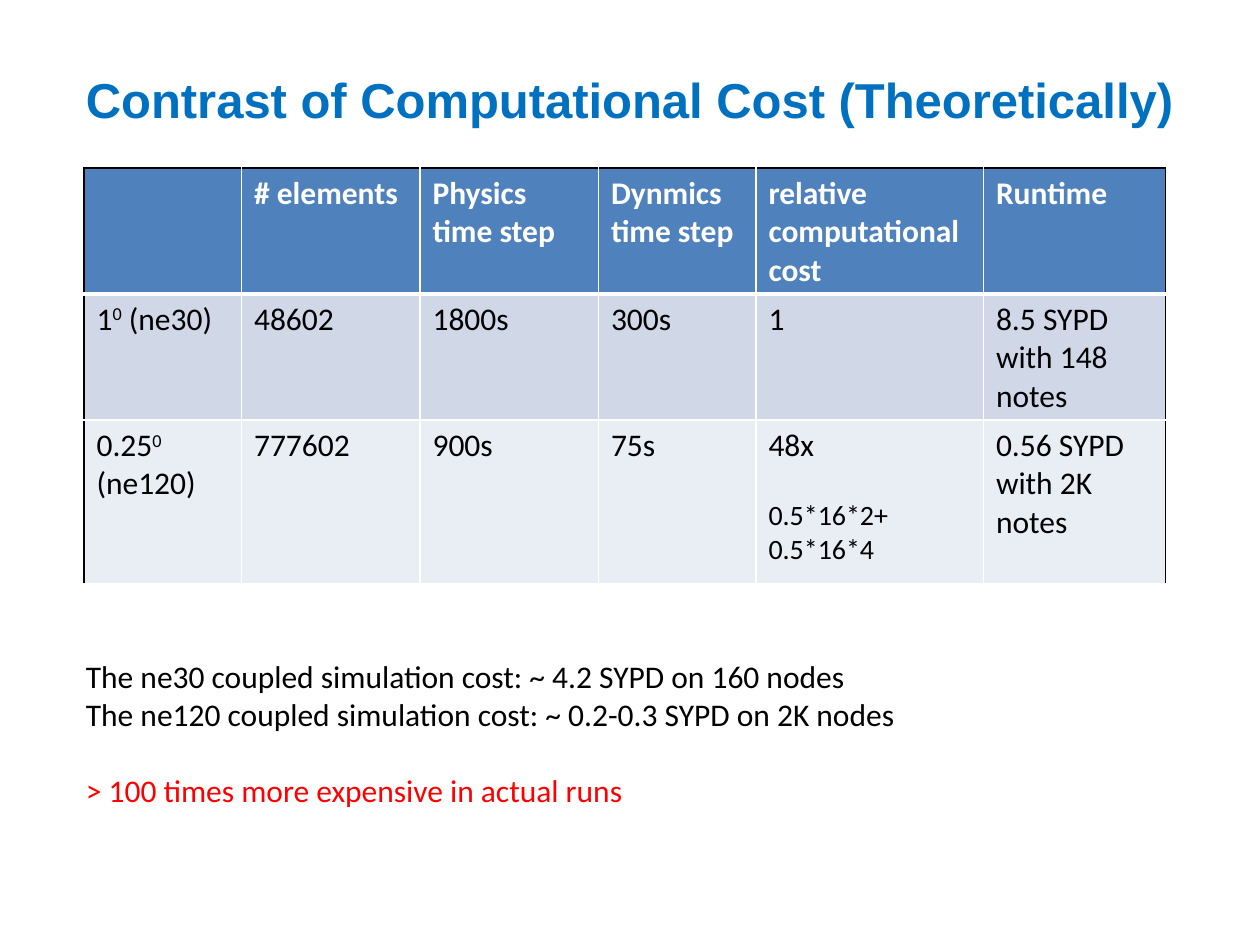
from lxml import etree
from pptx import Presentation
from pptx.dml.color import RGBColor
from pptx.oxml.ns import qn
from pptx.util import Pt

HUE = {
    "title": "0070C0", "head": "4F81BD", "odd": "D0D8E8", "even": "E9EDF4",
    "white": "FFFFFF", "black": "000000", "red": "FF0000",
}
COLS = [90, 102, 102, 90, 130, 104]
ROWS = [72, 72, 93.6]
FILLS = ["head", "odd", "even"]
CELLS = [
    ["", "# elements", "Physics time step", "Dynmics time step",
     "relative computational cost", "Runtime"],
    [("1", "0", " (ne30)"), "48602", "1800s", "300s", "1",
     "8.5 SYPD with 148 notes"],
    [("0.25", "0", " (ne120)"), "777602", "900s", "75s", "48x",
     "0.56 SYPD with 2K notes"],
]
SUMS = ["0.5*16*2+", "0.5*16*4"]
NOTES = [
    ("The ne30 coupled simulation cost: ~ 4.2 SYPD on 160 nodes", "black", 0),
    ("The ne120 coupled simulation cost: ~ 0.2-0.3 SYPD on 2K nodes", "black", 0),
    ("> 100 times more expensive in actual runs", "red", 22),
]


def rgb(name):
    return RGBColor.from_string(HUE[name])


def add_run(para, text, size=18, hue="black", bold=False, face="Calibri"):
    run = para.add_run()
    run.text = text
    font = run.font
    font.name, font.size, font.bold = face, Pt(size), bold
    font.color.rgb = rgb(hue)
    return run


def add_box(slide, box, wrap):
    frame = slide.shapes.add_textbox(*map(Pt, box)).text_frame
    frame.word_wrap = wrap
    return frame


def add_title(slide, box):
    para = add_box(slide, box, False).paragraphs[0]
    add_run(para, "Contrast of Computational Cost (Theoretically)",
            28, "title", True, "Arial")


def set_edge(cell, side, hue, width):
    line = etree.SubElement(cell._tc.get_or_add_tcPr(), qn("a:ln" + side),
                            w=str(Pt(width)))
    fill = etree.SubElement(line, qn("a:solidFill"))
    etree.SubElement(fill, qn("a:srgbClr"), val=HUE[hue])


def style_cell(cell, row, col):
    """Black on the outer left, right and top; a thick rule under the head."""
    outer = {"L": col == 0, "R": col == len(COLS) - 1, "T": row == 0, "B": False}
    for side, dark in outer.items():
        thick = (row, side) in ((0, "B"), (1, "T"))
        set_edge(cell, side, "black" if dark else "white", 3 if thick else 1)
    cell.fill.solid()
    cell.fill.fore_color.rgb = rgb(FILLS[row])


def fill_cell(cell, text, head):
    """A tuple holds the base, the superscript and the rest."""
    para = cell.text_frame.paragraphs[0]
    parts = text if isinstance(text, tuple) else (text,)
    for i, part in enumerate(parts):
        if part:
            run = add_run(para, part, hue="white" if head else "black", bold=head)
            if i == 1:
                run._r.get_or_add_rPr().set("baseline", "30000")


def add_costs(slide, left, top):
    table = slide.shapes.add_table(len(ROWS), len(COLS), Pt(left), Pt(top),
                                   Pt(sum(COLS)), Pt(sum(ROWS))).table
    for col, width in zip(table.columns, COLS):
        col.width = Pt(width)
    for r, height in enumerate(ROWS):
        table.rows[r].height = Pt(height)
        for c, text in enumerate(CELLS[r]):
            cell = table.cell(r, c)
            style_cell(cell, r, c)
            fill_cell(cell, text, r == 0)
    frame = table.cell(2, 4).text_frame
    for i, text in enumerate(SUMS):
        para = frame.add_paragraph()
        para.space_before = Pt(0 if i else 19.5)
        add_run(para, text, 16)


def add_notes(slide, box):
    frame = add_box(slide, box, True)
    for i, (text, hue, gap) in enumerate(NOTES):
        para = frame.add_paragraph() if i else frame.paragraphs[0]
        para.space_before = Pt(gap)
        add_run(para, text, hue=hue)


def main():
    deck = Presentation()
    deck.slide_width, deck.slide_height = Pt(720), Pt(540)
    slide = deck.slides.add_slide(deck.slide_layouts[6])
    add_title(slide, (42, 36, 643, 41))
    add_costs(slide, 48, 96)
    add_notes(slide, (42, 372, 618, 117))
    deck.save("out.pptx")


if __name__ == "__main__":
    main()
